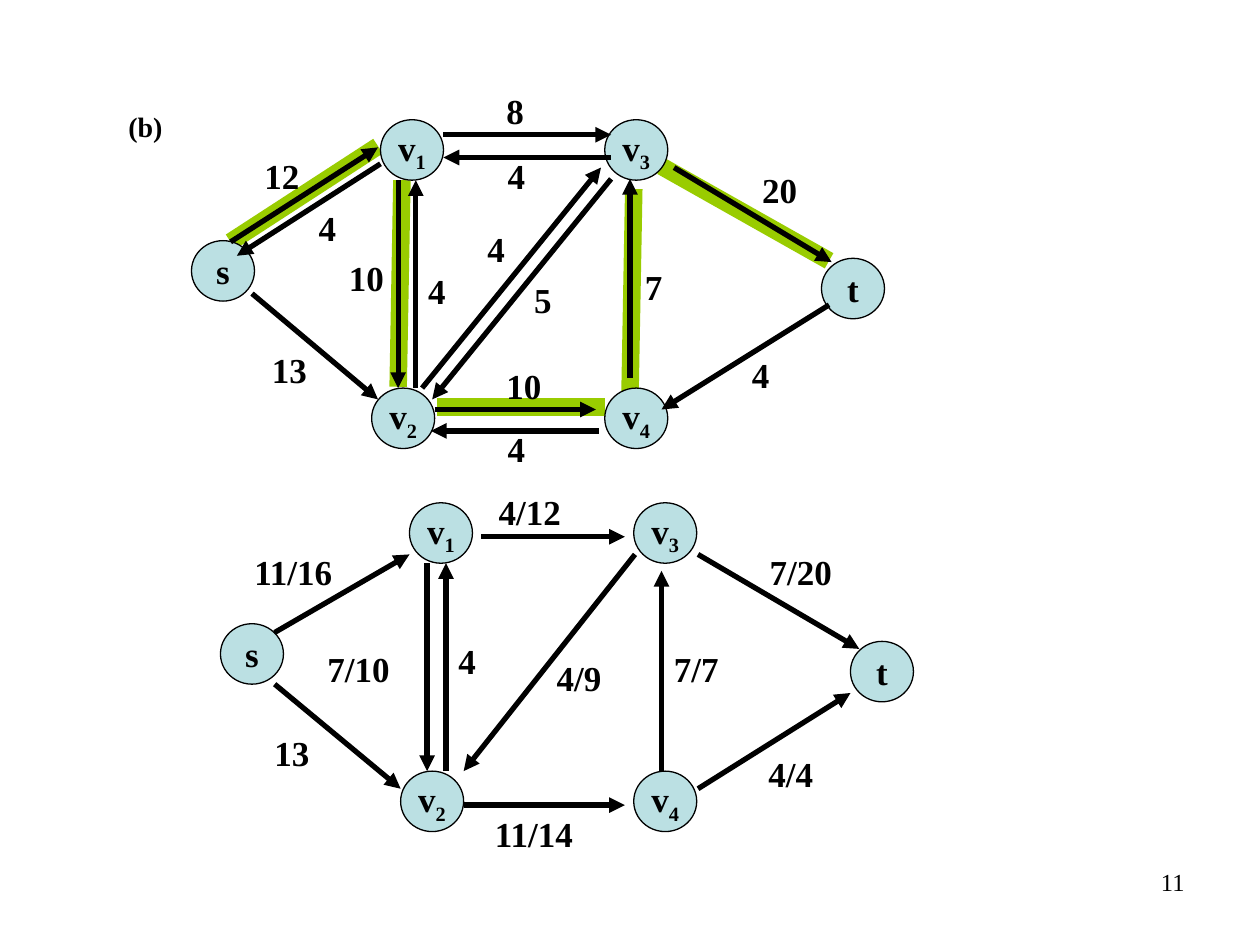
from typing import NamedTuple

import pptx
import pptx.dml.color
import pptx.enum.shapes
import pptx.enum.text
import pptx.oxml.ns
import pptx.util
from lxml import etree

PX = 9144  # EMU per px, 100 px to the inch
FONT = "Times New Roman"
BLACK = pptx.dml.color.RGBColor(0x00, 0x00, 0x00)
NODE_FILL = pptx.dml.color.RGBColor(0xBB, 0xE0, 0xE3)
HIGHLIGHT = pptx.dml.color.RGBColor(0x99, 0xCC, 0x00)
NODE_W, NODE_H = 50, 48
LABEL_H = 43
ALIGN = pptx.enum.text.PP_ALIGN
ANCHOR = pptx.enum.text.MSO_ANCHOR


class Node(NamedTuple):
    name: str
    sub: str
    x: int
    y: int


class Edge(NamedTuple):
    x1: int
    y1: int
    x2: int
    y2: int


class Label(NamedTuple):
    text: str
    x: int
    y: int


class Graph(NamedTuple):
    dx: int
    dy: int
    paths: list[Edge]
    edges: list[Edge]
    labels: list[Label]


NODES = [
    Node("s", "", 152, 191), Node("v", "1", 302, 95), Node("v", "2", 295, 308),
    Node("v", "3", 480, 95), Node("v", "4", 480, 308), Node("t", "", 652, 205),
]

RESIDUAL = Graph(
    0, 0,
    paths=[
        Edge(503, 150, 500, 313), Edge(525, 132, 658, 207), Edge(347, 323, 480, 323),
        Edge(319, 143, 316, 307), Edge(300, 116, 183, 192),
    ],
    edges=[
        Edge(183, 192, 300, 117), Edge(302, 130, 188, 203), Edge(200, 233, 300, 317),
        Edge(316, 143, 316, 308), Edge(330, 308, 330, 143),
        Edge(352, 107, 485, 107), Edge(485, 125, 352, 125),
        Edge(335, 308, 477, 133), Edge(485, 142, 343, 317),
        Edge(345, 325, 473, 325), Edge(475, 342, 342, 342),
        Edge(500, 300, 500, 142), Edge(535, 133, 660, 208), Edge(658, 242, 525, 325),
    ],
    labels=[
        Label("12", 200, 118), Label("4", 243, 159), Label("13", 206, 272),
        Label("10", 267, 199), Label("4", 330, 209), Label("8", 392, 66),
        Label("4", 393, 118), Label("4", 377, 176), Label("5", 414, 216),
        Label("10", 392, 284), Label("4", 393, 334), Label("7", 502, 206),
        Label("20", 595, 129), Label("4", 587, 276),
    ],
)

FLOW = Graph(
    23, 304,
    paths=[],
    edges=[
        Edge(218, 502, 325, 440), Edge(218, 543, 318, 626),
        Edge(339, 447, 339, 612), Edge(354, 612, 354, 447),
        Edge(382, 426, 496, 426), Edge(504, 440, 368, 612), Edge(368, 639, 496, 639),
        Edge(525, 612, 525, 453), Edge(554, 440, 682, 515), Edge(554, 626, 675, 550),
    ],
    labels=[
        Label("11/16", 192, 432), Label("13", 208, 576), Label("7/10", 250, 509),
        Label("4", 354, 503), Label("4/12", 386, 384), Label("4/9", 432, 516),
        Label("11/14", 383, 640), Label("7/7", 525, 509), Label("7/20", 601, 432),
        Label("4/4", 600, 592),
    ],
)


def px(*lengths: int) -> list[int]:
    return [n * PX for n in lengths]


def add_run(p, text: str, size: int, bold: bool):
    r = p.add_run()
    r.text = text
    style = {"name": FONT, "size": pptx.util.Pt(size), "bold": bold}
    for key, value in style.items():
        setattr(r.font, key, value)
    r.font.color.rgb = BLACK
    return r


def add_text(slide, label: Label, w: int, h: int = LABEL_H, size: int = 20,
             bold: bool = True, align=ALIGN.LEFT, fit: bool = True) -> None:
    tf = slide.shapes.add_textbox(*px(label.x, label.y, w, h)).text_frame
    tf.word_wrap = not fit
    if fit:
        tf.auto_size = pptx.enum.text.MSO_AUTO_SIZE.SHAPE_TO_FIT_TEXT
    tf.paragraphs[0].alignment = align
    add_run(tf.paragraphs[0], label.text, size, bold)


def label_width(text: str) -> int:
    """Insets plus 14 px a digit and 8 px a slash."""
    return 20 + sum(8 if c == "/" else 14 for c in text)


def add_node(slide, node: Node, dx: int, dy: int) -> None:
    sp = slide.shapes.add_shape(pptx.enum.shapes.MSO_SHAPE.OVAL,
                                *px(node.x + dx, node.y + dy, NODE_W, NODE_H))
    sp.shadow.inherit = False
    sp.fill.solid()
    sp.fill.fore_color.rgb = NODE_FILL
    sp.line.color.rgb = BLACK
    sp.line.width = pptx.util.Pt(0.75)
    tf = sp.text_frame
    tf.word_wrap = False
    tf.vertical_anchor = ANCHOR.MIDDLE
    p = tf.paragraphs[0]
    p.alignment = ALIGN.CENTER
    add_run(p, node.name, 20, True)
    if node.sub:
        r = add_run(p, node.sub, 20, True)
        r.font._element.set("baseline", "-25000")


def add_line(slide, edge: Edge, color, width: int, arrow: bool) -> None:
    line = slide.shapes.add_connector(pptx.enum.shapes.MSO_CONNECTOR.STRAIGHT, *px(*edge))
    line.line.color.rgb = color
    line.line.width = pptx.util.Pt(width)
    if arrow:
        ln = line.line._get_or_add_ln()
        etree.SubElement(ln, pptx.oxml.ns.qn("a:tailEnd"), type="triangle")
    etree.SubElement(line._element.spPr, pptx.oxml.ns.qn("a:effectLst"))


def add_graph(slide, graph: Graph) -> None:
    for edge in graph.paths:
        add_line(slide, edge, HIGHLIGHT, 10, arrow=False)
    for node in NODES:
        add_node(slide, node, graph.dx, graph.dy)
    for edge in graph.edges:
        add_line(slide, edge, BLACK, 3, arrow=True)
    for label in graph.labels:
        add_text(slide, label, label_width(label.text))


def main() -> None:
    prs = pptx.Presentation()
    prs.slide_width, prs.slide_height = px(1000, 750)
    slide = prs.slides.add_slide(prs.slide_layouts[6])
    add_text(slide, Label("(b)", 92, 82), 47, 37, size=16)
    for graph in (RESIDUAL, FLOW):
        add_graph(slide, graph)
    add_text(slide, Label("11", 717, 683), 233, 52, size=14, bold=False,
             align=ALIGN.RIGHT, fit=False)
    prs.save("out.pptx")


if __name__ == "__main__":
    main()
